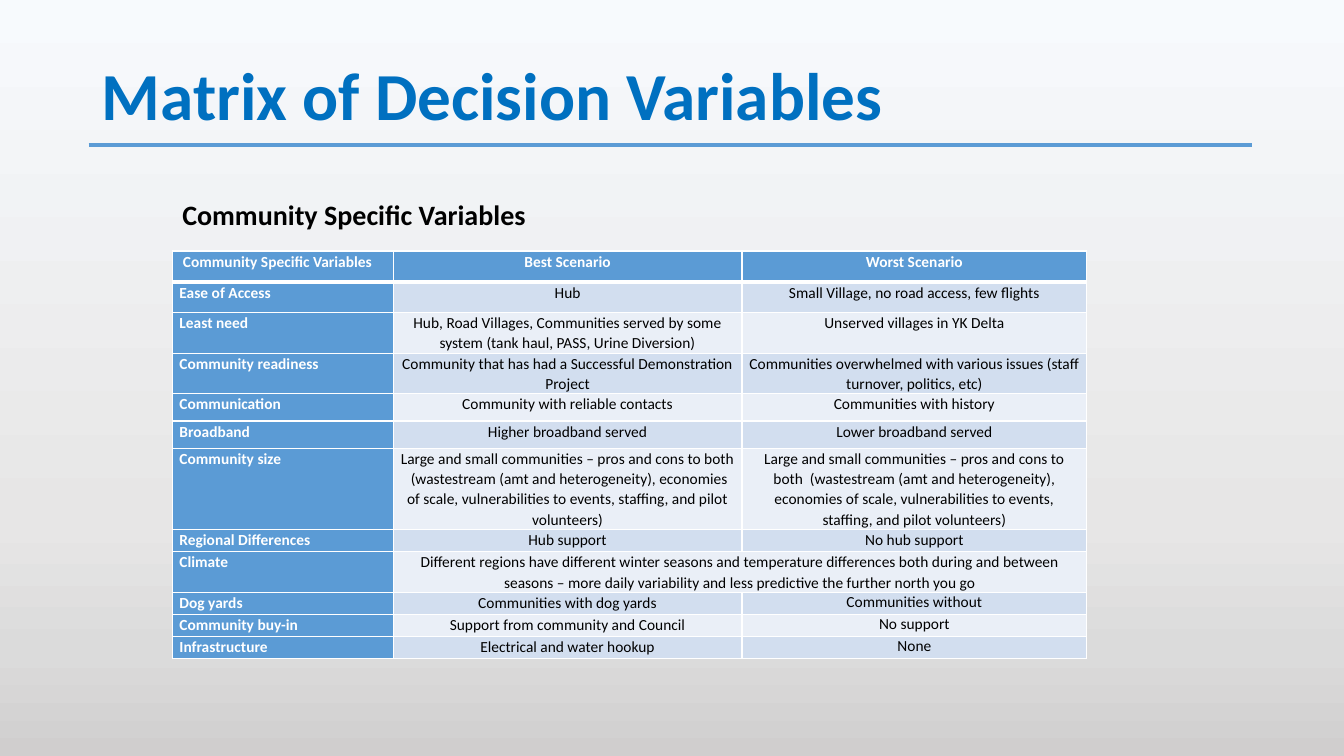
from dataclasses import dataclass

from lxml import etree
from pptx import Presentation
from pptx import util as u
from pptx.dml.color import RGBColor
from pptx.enum import shapes, text
from pptx.oxml import ns


@dataclass(frozen=True)
class Theme:
    font: str = "Calibri"
    title: str = "0070C0"
    main: str = "5B9BD5"
    dark: str = "D2DEEF"
    light: str = "EAEFF7"
    white: str = "FFFFFF"
    black: str = "000000"
    back: tuple = ((0, "F7FAFD"), (69, "E7E6E6"), (86, "DBDBDB"), (100, "D0CECE"))
    big: int = 48
    mid: int = 20
    small: int = 11


THEME = Theme()
LEFT, TOP = 1.71, 2.49
COLS = (2.19, 3.46, 3.42)
SIZE = ("Large and small communities – pros and cons to both  (wastestream "
        "(amt and heterogeneity), economies of scale, vulnerabilities to events, "
        "staffing, and pilot volunteers)")

# Row height, then the cell texts; a row of two texts spans the scenarios
ROWS = (
    (0.31, " Community Specific Variables", "Best Scenario", "Worst Scenario"),
    (0.30, "Ease of Access", "Hub", "Small Village, no road access, few flights"),
    (0.22, "Least need",
     "Hub, Road Villages, Communities served by some system "
     "(tank haul, PASS, Urine Diversion)",
     "Unserved villages in YK Delta"),
    (0.40, "Community readiness",
     "Community that has had a Successful Demonstration Project",
     "Communities overwhelmed with various issues (staff turnover, politics, etc)"),
    (0.27, "Communication", "Community with reliable contacts",
     "Communities with history"),
    (0.27, "Broadband", "Higher broadband served", "Lower broadband served"),
    (0.22, "Community size", SIZE, SIZE),
    (0.22, "Regional Differences", "Hub support", "No hub support"),
    (0.22, "Climate",
     "Different regions have different winter seasons and temperature differences "
     "both during and between seasons – more daily variability and less predictive "
     "the further north you go"),
    (0.22, "Dog yards", "Communities with dog yards", "Communities without"),
    (0.22, "Community buy-in", "Support from community and Council", "No support"),
    (0.22, "Infrastructure", "Electrical and water hookup", "None"),
)
TIGHT = 9  # from this row on, the last column is single spaced


def color(code):
    return RGBColor.from_string(code)


def write(frame, words, size, code, bold=True, align=None, gap=None):
    frame.text = words
    para = frame.paragraphs[0]
    para.alignment = align
    para.line_spacing = gap
    for run in para.runs:
        font = run.font
        font.name, font.size, font.bold = THEME.font, u.Pt(size), bold
        font.color.rgb = color(code)


def paint_back(slide):
    fill = slide.background.fill
    fill.gradient()
    fill.gradient_angle = 270
    stops = next(slide.element.iter(ns.qn("a:gsLst")))
    for stop in list(stops):
        stops.remove(stop)
    for spot, code in THEME.back:
        stop = etree.SubElement(stops, ns.qn("a:gs"), pos=str(spot * 1000))
        etree.SubElement(stop, ns.qn("a:srgbClr"), val=code)


def add_title(slide, words):
    title = slide.shapes.title
    title.left, title.top = u.Inches(0.91), u.Inches(0.3)
    title.width, title.height = u.Inches(11.5), u.Inches(1.09)
    frame = title.text_frame
    frame.auto_size = text.MSO_AUTO_SIZE.NONE
    frame.vertical_anchor = text.MSO_ANCHOR.BOTTOM
    write(frame, words, THEME.big, THEME.title, align=text.PP_ALIGN.LEFT, gap=0.9)


def add_rule(slide, left, right, top):
    rule = slide.shapes.add_connector(
        shapes.MSO_CONNECTOR.STRAIGHT,
        u.Inches(left), u.Inches(top), u.Inches(right), u.Inches(top))
    rule.line.color.rgb = color(THEME.main)
    rule.line.width = u.Pt(3)
    etree.SubElement(rule.element.spPr, ns.qn("a:effectLst"))


def add_head(slide, words):
    box = slide.shapes.add_textbox(
        u.Inches(LEFT), u.Inches(1.91), u.Inches(6.67), u.Inches(0.44))
    frame = box.text_frame
    frame.word_wrap = True
    frame.auto_size = text.MSO_AUTO_SIZE.SHAPE_TO_FIT_TEXT
    write(frame, words, THEME.mid, THEME.black)


def add_edges(cell, base):
    props = cell._tc.get_or_add_tcPr()
    for side in "LRTB":
        width = base if side == "B" else 1
        line = etree.SubElement(props, ns.qn("a:ln" + side), w=str(u.Pt(width)))
        fill = etree.SubElement(line, ns.qn("a:solidFill"))
        etree.SubElement(fill, ns.qn("a:srgbClr"), val=THEME.white)


def style_cell(cell, row, col):
    cell.margin_left = cell.margin_right = u.Inches(0.07)
    cell.margin_top = cell.margin_bottom = 0
    add_edges(cell, 1 if row else 3)
    band = THEME.dark if row % 2 else THEME.light
    cell.fill.solid()
    cell.fill.fore_color.rgb = color(band if row and col else THEME.main)


def add_matrix(slide):
    high = sum(row[0] for row in ROWS)
    table = slide.shapes.add_table(
        len(ROWS), len(COLS), u.Inches(LEFT), u.Inches(TOP),
        u.Inches(sum(COLS)), u.Inches(high)).table
    for col, width in enumerate(COLS):
        table.columns[col].width = u.Inches(width)
    for row, (height, *words) in enumerate(ROWS):
        table.rows[row].height = u.Inches(height)
        for col in range(len(COLS)):
            style_cell(table.cell(row, col), row, col)
        if len(words) < len(COLS):
            table.cell(row, 1).merge(table.cell(row, 2))
        for col, word in enumerate(words):
            label = row == 0 or col == 0
            write(table.cell(row, col).text_frame, word, THEME.small,
                  THEME.white if label else THEME.black, bold=label,
                  align=text.PP_ALIGN.CENTER if col else text.PP_ALIGN.LEFT,
                  gap=1.0 if row >= TIGHT and col == 2 else 1.07)


def main():
    deck = Presentation()
    deck.slide_width, deck.slide_height = u.Inches(13.33), u.Inches(7.5)
    slide = deck.slides.add_slide(deck.slide_layouts[5])
    paint_back(slide)
    add_title(slide, "Matrix of Decision Variables")
    add_rule(slide, 0.88, 12.42, 1.44)
    add_matrix(slide)
    add_head(slide, "Community Specific Variables")
    deck.save("out.pptx")


if __name__ == "__main__":
    main()
